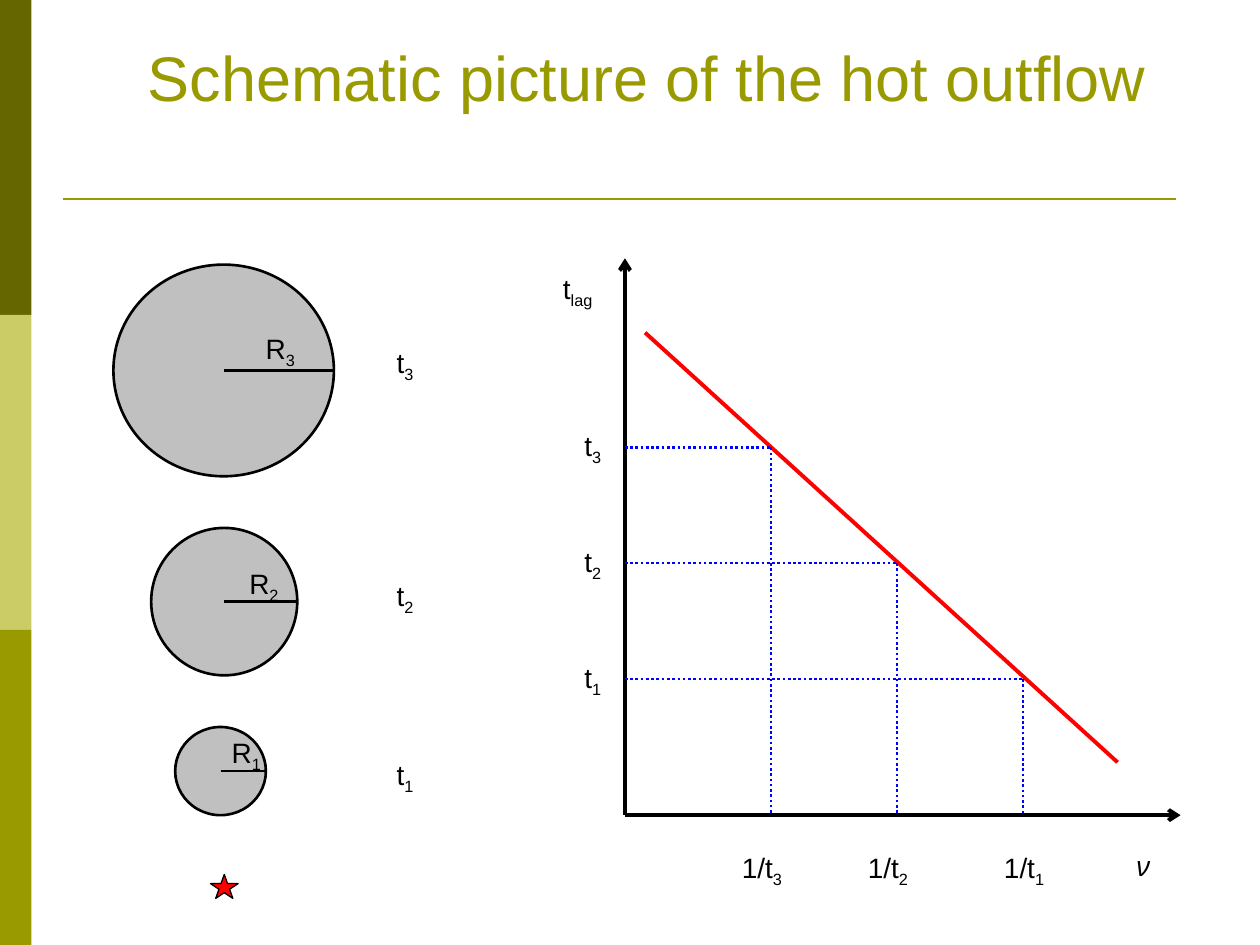
from lxml import etree
from pptx import Presentation
from pptx.dml.color import RGBColor
from pptx.enum.dml import MSO_LINE
from pptx.enum.shapes import MSO_CONNECTOR, MSO_SHAPE
from pptx.enum.text import MSO_ANCHOR, MSO_AUTO_SIZE, PP_ALIGN
from pptx.oxml.ns import qn
from pptx.util import Inches, Pt

STRAIGHT = MSO_CONNECTOR.STRAIGHT
RECTANGLE, ELLIPSE, STAR = MSO_SHAPE.RECTANGLE, MSO_SHAPE.OVAL, MSO_SHAPE.STAR_5_POINT
DOTTED = MSO_LINE.ROUND_DOT
BOTTOM, CENTER = MSO_ANCHOR.BOTTOM, PP_ALIGN.CENTER
GROW = MSO_AUTO_SIZE.SHAPE_TO_FIT_TEXT

WIDTH, HEIGHT = Inches(10), Inches(7.5)
COLUMN, ROW = WIDTH / 100, HEIGHT / 75
OLIVE, BLACK, RED, BLUE, GREY = "999900", "000000", "FF0000", "0000FF", "C0C0C0"


def rgb(code):
    return RGBColor.from_string(code)


def grid(*lengths):
    return [round(n * (ROW if i % 2 else COLUMN)) for i, n in enumerate(lengths)]


def add_figure(shapes, kind, box, fill, outline=None):
    figure = shapes.add_shape(kind, *grid(*box))
    figure.shadow.inherit = False
    figure.fill.solid()
    figure.fill.fore_color.rgb = rgb(fill)
    if outline:
        figure.line.color.rgb = rgb(BLACK)
        figure.line.width = Pt(outline)
    else:
        figure.line.fill.background()


def add_line(shapes, start, end, color, weight, dash=None, arrow=False):
    stroke = shapes.add_connector(STRAIGHT, *grid(*start, *end))
    stroke.line.color.rgb = rgb(color)
    stroke.line.width = Pt(weight)
    if dash:
        stroke.line.dash_style = dash
    if arrow:
        etree.SubElement(stroke.line._get_or_add_ln(), qn("a:headEnd"), type="arrow")
    etree.SubElement(stroke._element.spPr, qn("a:effectLst"))


def style_run(run, size, color, face="Arial"):
    run.font.size = Pt(size)
    run.font.name = face
    run.font.color.rgb = rgb(color)


def add_label(shapes, box, base, subscript="", spacing=1.2, face="Arial", italic=False):
    frame = shapes.add_textbox(*grid(*box)).text_frame
    frame.word_wrap = False
    frame.auto_size = GROW
    paragraph = frame.paragraphs[0]
    paragraph.line_spacing = spacing
    for part in filter(None, (base, subscript)):
        run = paragraph.add_run()
        run.text = part
        style_run(run, 16, BLACK, face)
        run.font.italic = italic
    if subscript:
        run._r.get_or_add_rPr().set("baseline", "-25000")


def add_title(shapes):
    frame = shapes.add_textbox(*grid(2.7, -0.2, 97.3, 15.5)).text_frame
    frame.word_wrap = True
    frame.vertical_anchor = BOTTOM
    frame.margin_bottom = round(6.25 * ROW)
    frame.text = "Schematic picture of the hot outflow"
    frame.paragraphs[0].alignment = CENTER
    style_run(frame.paragraphs[0].runs[0], 36, OLIVE)


def add_backdrop(shapes):
    for band, shade in enumerate(("666600", "CCCC66", OLIVE)):
        add_figure(shapes, RECTANGLE, (0, 25 * band, 2.5, 25), shade)
    add_line(shapes, (5, 15.8), (93.3, 15.8), OLIVE, 1.5)


def add_lag_plot(shapes):
    left, floor = 49.6, 64.7
    add_line(shapes, (left, 20.5), (left, floor), BLACK, 2.25, arrow=True)
    add_line(shapes, (93.7, floor), (left, floor), BLACK, 2.25, arrow=True)
    add_line(shapes, (51.2, 26.4), (88.7, 60.5), RED, 2.25)
    for step, (epoch, frequency_left) in enumerate((("3", 57.9), ("2", 67.9), ("1", 78.7))):
        frequency, lag = 61.2 + 10 * step, 35.5 + 9.2 * step
        add_line(shapes, (left, lag), (frequency, lag), BLUE, 1.5, DOTTED)
        add_line(shapes, (frequency, lag), (frequency, floor), BLUE, 1.5, DOTTED)
        add_label(shapes, (frequency_left, 66.4, 5.3, 4.2), "1/t", epoch)
        add_label(shapes, (45.4, lag - 2.55, 3.5, 4.2), "t", epoch)
    add_label(shapes, (43.7, 18, 4.7, 6.4), "t", "lag", spacing=2)
    add_label(shapes, (89.2, 66.3, 4.9, 4.2), "ν", face="Open Sans", italic=True)


def add_outflow(shapes):
    stages = (
        ("3", 17.75, 29.4, 17.5, 16.8, (20.1, 25.2), 26.3),
        ("2", 17.8, 47.75, 11.6, 11.7, (18.8, 43.9), 44.8),
        ("1", 17.5, 61.2, 7.2, 7, (17.4, 57.3), 59),
    )
    for epoch, x, y, width, height, radius_corner, time_top in stages:
        add_figure(shapes, ELLIPSE, (x - width / 2, y - height / 2, width, height), GREY, 1.5)
        add_line(shapes, (x, y), (x + width / 2, y), BLACK, 1.5)
        add_label(shapes, (*radius_corner, 4.5, 4.2), "R", epoch)
        add_label(shapes, (30.5, time_top, 3.5, 4.2), "t", epoch)
    add_figure(shapes, STAR, (16.7, 69.4, 2.2, 1.9), RED, 0.75)


def main():
    deck = Presentation()
    deck.slide_width, deck.slide_height = WIDTH, HEIGHT
    shapes = deck.slides.add_slide(deck.slide_layouts[6]).shapes
    add_backdrop(shapes)
    add_title(shapes)
    add_lag_plot(shapes.add_group_shape().shapes)
    add_outflow(shapes.add_group_shape().shapes)
    deck.save("out.pptx")


if __name__ == "__main__":
    main()
